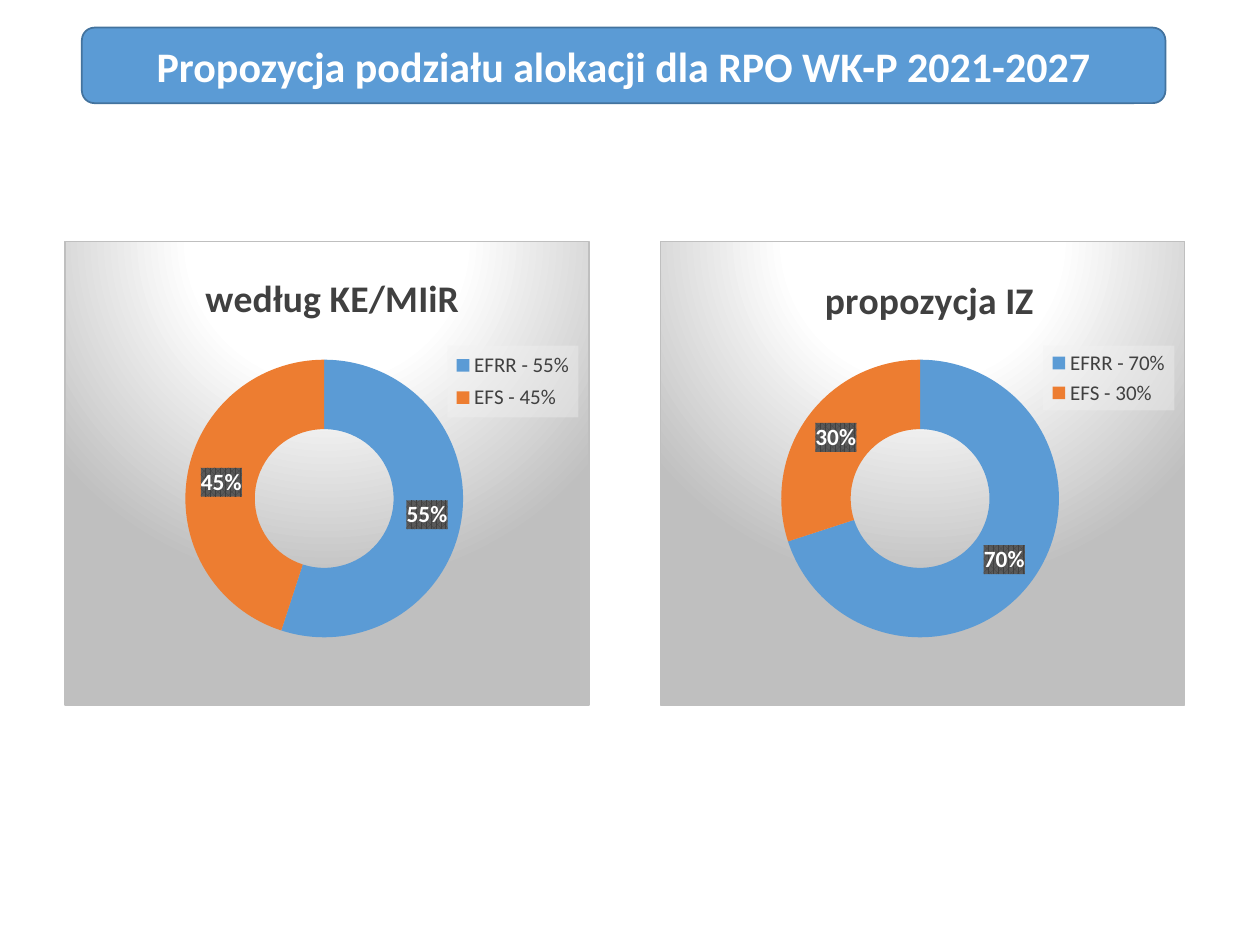
import dataclasses

import pptx
import pptx.chart.data
import pptx.dml.color
import pptx.enum.chart
import pptx.enum.shapes
import pptx.enum.text
import pptx.oxml
import pptx.oxml.ns
import pptx.util
from pptx.util import Pt


@dataclasses.dataclass(frozen=True)
class Theme:
    """Colours and type sizes of the slide."""

    font: str = "Calibri"
    white: str = "FFFFFF"
    black: str = "000000"
    text: str = "404040"
    blue: str = "5B9BD5"
    blue_line: str = "43739E"
    orange: str = "ED7D31"
    silver: str = "BFBFBF"
    legend_fill: str = "F2F2F2"
    label_stripe: str = "595959"
    heading_size: float = 24
    title_size: float = 21.6
    legend_size: float = 12
    label_size: float = 13.3
    base_size: float = 10


THEME = Theme()
NAMESPACES = pptx.oxml.ns.nsdecls("c", "a")


def rgb(value):
    """Return a colour from its hexadecimal value."""
    return pptx.dml.color.RGBColor.from_string(value)


def style_font(font, size, color, bold=False):
    """Apply the theme font with the given size, colour and weight."""
    font.name = THEME.font
    font.size = Pt(size)
    font.bold = bold
    font.color.rgb = rgb(color)


def shape_properties(content):
    """Return a chart spPr element holding the given fill and line."""
    return pptx.oxml.parse_xml(f"<c:spPr {NAMESPACES}>{content}</c:spPr>")


def solid(color, alpha=100):
    """Return the markup of a solid fill."""
    return (f'<a:solidFill><a:srgbClr val="{color}">'
            f'<a:alpha val="{alpha * 1000}"/></a:srgbClr></a:solidFill>')


def place_part(parent, index, inner=False, **fractions):
    """Give a chart part a manual layout in fractions of the chart."""
    for layout in parent.xpath("./c:layout"):
        parent.remove(layout)
    target = '<c:layoutTarget val="inner"/>' if inner else ""
    modes = "".join(f'<c:{axis}Mode val="edge"/>' for axis in "xy")
    values = "".join(f'<c:{key} val="{value}"/>' for key, value in fractions.items())
    parent.insert(index, pptx.oxml.parse_xml(
        f"<c:layout {NAMESPACES}><c:manualLayout>{target}{modes}{values}"
        "</c:manualLayout></c:layout>"))


def add_heading(slide, text, left, top, width, height):
    """Add the rounded heading bar."""
    shape = slide.shapes.add_shape(
        pptx.enum.shapes.MSO_SHAPE.ROUNDED_RECTANGLE,
        Pt(left), Pt(top), Pt(width), Pt(height))
    shape.shadow.inherit = False
    shape.fill.solid()
    shape.fill.fore_color.rgb = rgb(THEME.blue)
    shape.line.color.rgb = rgb(THEME.blue_line)
    shape.line.width = Pt(1)
    frame = shape.text_frame
    frame.text = text
    frame.vertical_anchor = pptx.enum.text.MSO_ANCHOR.MIDDLE
    paragraph = frame.paragraphs[0]
    paragraph.alignment = pptx.enum.text.PP_ALIGN.CENTER
    style_font(paragraph.runs[0].font, THEME.heading_size, THEME.white, True)


def style_background(chart):
    """Fill the chart area with a radial gradient and a thin border."""
    stops = "".join(
        f'<a:gs pos="{position * 1000}"><a:srgbClr val="{color}"/></a:gs>'
        for position, color in ((0, THEME.white), (39, THEME.white), (100, THEME.silver)))
    chart.element.xpath("./c:chart")[0].addnext(shape_properties(
        f'<a:gradFill><a:gsLst>{stops}</a:gsLst><a:path path="circle">'
        '<a:fillToRect l="50000" t="-80000" r="50000" b="180000"/></a:path></a:gradFill>'
        f'<a:ln w="{Pt(0.75)}">{solid(THEME.silver)}</a:ln>'))


def style_title(chart, text, x, y):
    """Write and place the chart title."""
    chart.has_title = True
    frame = chart.chart_title.text_frame
    frame.text = text
    style_font(frame.paragraphs[0].runs[0].font, THEME.title_size, THEME.text, True)
    place_part(chart.element.xpath("./c:chart/c:title")[0], 1, x=x, y=y)


def style_legend(chart, height):
    """Place the legend over the chart on a translucent panel."""
    chart.has_legend = True
    chart.legend.position = pptx.enum.chart.XL_LEGEND_POSITION.RIGHT
    chart.legend.include_in_layout = False
    style_font(chart.legend.font, THEME.legend_size, THEME.text)
    legend = chart.element.xpath("./c:chart/c:legend")[0]
    place_part(legend, 1, x=0.73, y=0.225, w=0.25, h=height)
    legend.xpath("./c:txPr")[0].addprevious(
        shape_properties(solid(THEME.legend_fill, 39)))


def style_ring(chart):
    """Colour the ring and show percentages on patterned labels."""
    chart.plots[0].vary_by_categories = True
    series = chart.plots[0].series[0]
    for index, color in enumerate((THEME.blue, THEME.orange)):
        point = series.points[index]
        point.format.fill.solid()
        point.format.fill.fore_color.rgb = rgb(color)
        point.format.line.fill.background()
    labels = series.data_labels
    labels.show_value = False
    labels.show_percentage = True
    labels.number_format = "0%"
    labels.number_format_is_linked = False
    style_font(labels.font, THEME.label_size, THEME.white, True)
    chart.element.xpath(".//c:ser/c:dLbls/c:txPr")[0].addprevious(shape_properties(
        f'<a:pattFill prst="pct75"><a:fgClr><a:srgbClr val="{THEME.text}"/></a:fgClr>'
        f'<a:bgClr><a:srgbClr val="{THEME.label_stripe}"/></a:bgClr></a:pattFill>'))


def add_allocation_chart(slide, title, shares, title_at, legend_height,
                         left, top, width, height):
    """Add one doughnut chart of the fund shares in the given box."""
    data = pptx.chart.data.CategoryChartData()
    data.categories = [f"{fund} - {share}%" for fund, share in shares.items()]
    data.add_series("Series 1", list(shares.values()))
    chart = slide.shapes.add_chart(
        pptx.enum.chart.XL_CHART_TYPE.DOUGHNUT,
        Pt(left), Pt(top), Pt(width), Pt(height), data).chart
    style_font(chart.font, THEME.base_size, THEME.black)
    style_background(chart)
    style_title(chart, title, *title_at)
    style_legend(chart, legend_height)
    style_ring(chart)
    place_part(chart.element.xpath("./c:chart/c:plotArea")[0], 0, inner=True,
               x=0.23, y=0.175, w=0.53, h=0.76)


def main():
    """Build and save the slide."""
    presentation = pptx.Presentation()
    presentation.slide_width = Pt(720)
    presentation.slide_height = Pt(540)
    slide = presentation.slides.add_slide(presentation.slide_layouts[6])
    add_heading(slide, "Propozycja podziału alokacji dla RPO WK-P 2021-2027",
                46.8, 15.8, 619.2, 43.2)
    charts = (
        ("według KE/MIiR", {"EFRR": 55, "EFS": 45}, (0.255, 0.05), 0.155),
        ("propozycja IZ", {"EFRR": 70, "EFS": 30}, (0.3, 0.055), 0.14),
    )
    for column, content in enumerate(charts):
        add_allocation_chart(slide, *content, 36.7 + 340.5 * column, 137.5, 300.2, 265.7)
    presentation.save("out.pptx")


if __name__ == "__main__":
    main()
